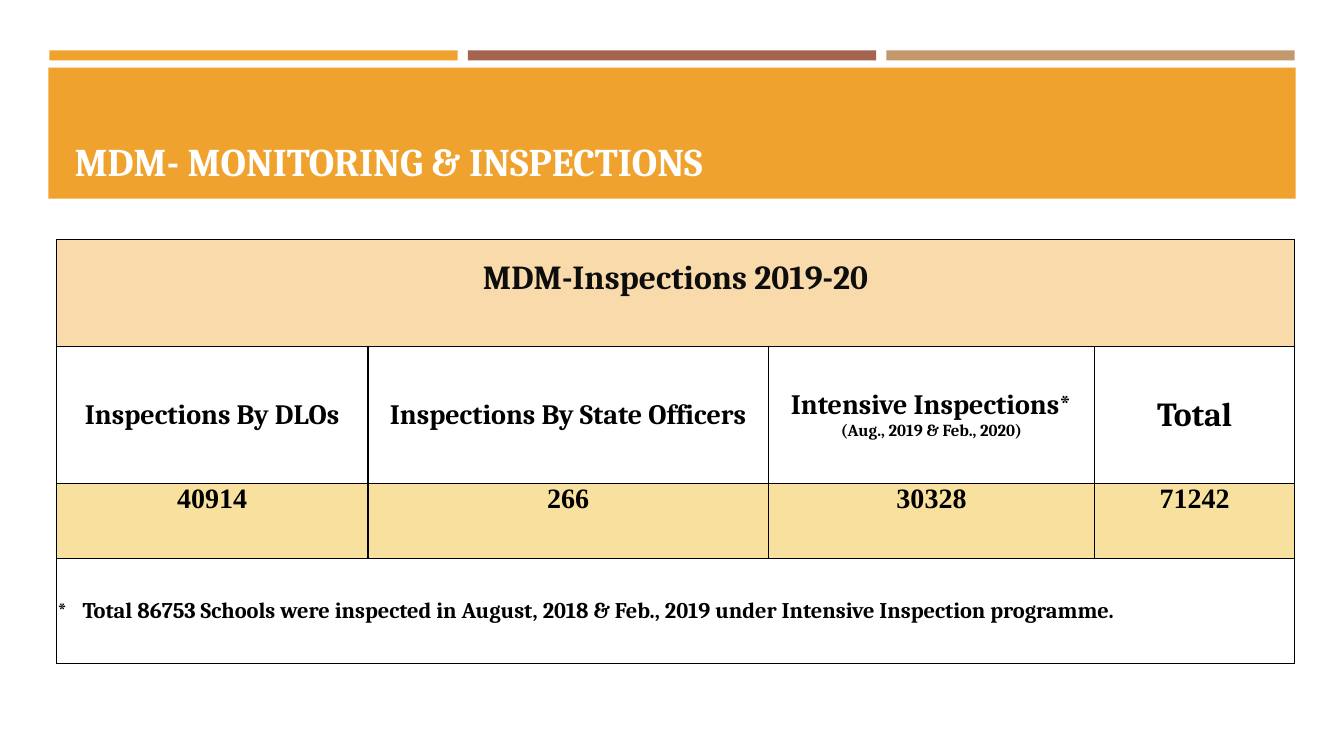
"""Build the MDM monitoring and inspections slide."""
from dataclasses import dataclass

from lxml import etree
from pptx import Presentation
from pptx.dml.color import RGBColor
from pptx.enum.shapes import MSO_SHAPE
from pptx.enum.text import MSO_ANCHOR, MSO_AUTO_SIZE, PP_ALIGN
from pptx.oxml.ns import qn
from pptx.util import Inches, Pt

RECT = MSO_SHAPE.RECTANGLE
TOP, MIDDLE, BOTTOM = MSO_ANCHOR.TOP, MSO_ANCHOR.MIDDLE, MSO_ANCHOR.BOTTOM
LEFT, CENTER = PP_ALIGN.LEFT, PP_ALIGN.CENTER
NO_FIT = MSO_AUTO_SIZE.NONE


@dataclass(frozen=True)
class Theme:
    orange: str = "F0A22E"
    brown: str = "A5644E"
    tan: str = "C3986D"
    peach: str = "F9DAAB"
    yellow: str = "F8E19F"
    white: str = "FFFFFF"
    black: str = "000000"
    ink: str = "0D0D0D"
    serif: str = "Cambria"
    figures: str = "Times New Roman"
    title: int = 28
    heading: int = 24
    body: int = 20
    footnote: int = 16
    small: int = 12


T = Theme()

TITLE = "MDM- MONITORING & INSPECTIONS"
CAPTION = "MDM-Inspections 2019-20"
HEADERS = [
    [("Inspections By DLOs", T.body)],
    [("Inspections By State Officers", T.body)],
    [("Intensive Inspections*", T.body), ("(Aug., 2019 & Feb., 2020)", T.small)],
    [("Total", T.heading)],
]
COUNTS = ["40914", "266", "30328", "71242"]
FOOTNOTE = ("*\tTotal 86753 Schools were inspected in August, 2018 & Feb., 2019 "
            "under Intensive Inspection programme.")

BAR_COLORS = [T.orange, T.brown, T.tan]
BAR_LEFT, BAR_TOP, BAR_W, BAR_H, BAR_STEP = 0.49, 0.5, 4.05, 0.1, 4.15
BANNER = (0.48, 0.67, 12.37, 1.3)
TITLE_BOX = (0.64, 0.77, 12.06, 1.11)
TABLE_LEFT, TABLE_TOP = 0.56, 2.38
COL_WIDTHS = [3.09, 3.97, 3.24, 1.98]
ROW_HEIGHTS = [1.06, 1.36, 0.74, 1.04]
CELL_INSETS = (0.07, 0, 0.07, 0)
CAPTION_INSETS = (0.07, 0, 0.07, 0.29)
NOTE_INSETS = (0.01, 0.01, 0.01, 0)
NOTE_INDENT = 0.25


def rgb(value):
    return RGBColor.from_string(value)


def add_bar(s, box, color):
    sp = s.shapes.add_shape(RECT, *map(Inches, box))
    sp.shadow.inherit = False
    sp.fill.solid()
    sp.fill.fore_color.rgb = rgb(color)
    sp.line.fill.background()


def add_run(p, text, size, color=T.black, font=T.serif):
    r = p.add_run()
    r.text = text
    r.font.size = Pt(size)
    r.font.name = font
    r.font.bold = True
    r.font.color.rgb = rgb(color)


def fill_cell(cell, lines, fill, insets=CELL_INSETS, anchor=MIDDLE, align=CENTER, **style):
    tf = cell.text_frame
    for i, (text, size) in enumerate(lines):
        p = tf.add_paragraph() if i else tf.paragraphs[0]
        p.alignment = align
        add_run(p, text, size, **style)
    cell.vertical_anchor = anchor
    cell.margin_left, cell.margin_top, cell.margin_right, cell.margin_bottom = map(Inches, insets)
    cell.fill.solid()
    cell.fill.fore_color.rgb = rgb(fill)


def add_borders(cell):
    tc_pr = cell._tc.get_or_add_tcPr()
    for i, side in enumerate(("lnL", "lnR", "lnT", "lnB")):
        ln = etree.Element(qn(f"a:{side}"), w=str(Pt(1)))
        solid = etree.SubElement(ln, qn("a:solidFill"))
        etree.SubElement(solid, qn("a:srgbClr"), val=T.black)
        tc_pr.insert(i, ln)


def add_title(s):
    title = s.shapes.title
    title.left, title.top, title.width, title.height = map(Inches, TITLE_BOX)
    tf = title.text_frame
    tf.word_wrap = True
    tf.auto_size = NO_FIT
    tf.vertical_anchor = BOTTOM
    p = tf.paragraphs[0]
    p.alignment = LEFT
    add_run(p, TITLE, T.title, T.white)
    title.element.getparent().append(title.element)


def add_inspections(s):
    frame = s.shapes.add_table(
        len(ROW_HEIGHTS), len(COL_WIDTHS), Inches(TABLE_LEFT), Inches(TABLE_TOP),
        Inches(sum(COL_WIDTHS)), Inches(sum(ROW_HEIGHTS)))
    table = frame.table
    table.first_row = table.horz_banding = False
    for col, width in zip(table.columns, COL_WIDTHS):
        col.width = Inches(width)
    for row, height in zip(table.rows, ROW_HEIGHTS):
        row.height = Inches(height)
    last_row, last_col = len(ROW_HEIGHTS) - 1, len(COL_WIDTHS) - 1
    for row in (0, last_row):
        table.cell(row, 0).merge(table.cell(row, last_col))

    fill_cell(table.cell(0, 0), [(CAPTION, T.heading)], T.peach, CAPTION_INSETS, color=T.ink)
    for col, (header, count) in enumerate(zip(HEADERS, COUNTS)):
        fill_cell(table.cell(1, col), header, T.white)
        fill_cell(table.cell(2, col), [(count, T.body)], T.yellow, anchor=TOP, font=T.figures)
    note = table.cell(last_row, 0)
    fill_cell(note, [(FOOTNOTE, T.footnote)], T.white, NOTE_INSETS, align=LEFT)
    p_pr = note.text_frame.paragraphs[0]._p.get_or_add_pPr()
    p_pr.set("marL", str(Inches(NOTE_INDENT)))
    p_pr.set("indent", str(-Inches(NOTE_INDENT)))
    for cell in table.iter_cells():
        add_borders(cell)


def main():
    prs = Presentation()
    prs.slide_width, prs.slide_height = Inches(13.33), Inches(7.5)
    s = prs.slides.add_slide(prs.slide_layouts[5])
    for i, color in enumerate(BAR_COLORS):
        add_bar(s, (BAR_LEFT + i * BAR_STEP, BAR_TOP, BAR_W, BAR_H), color)
    add_bar(s, BANNER, T.orange)
    add_title(s)
    add_inspections(s)
    prs.save("out.pptx")


if __name__ == "__main__":
    main()
